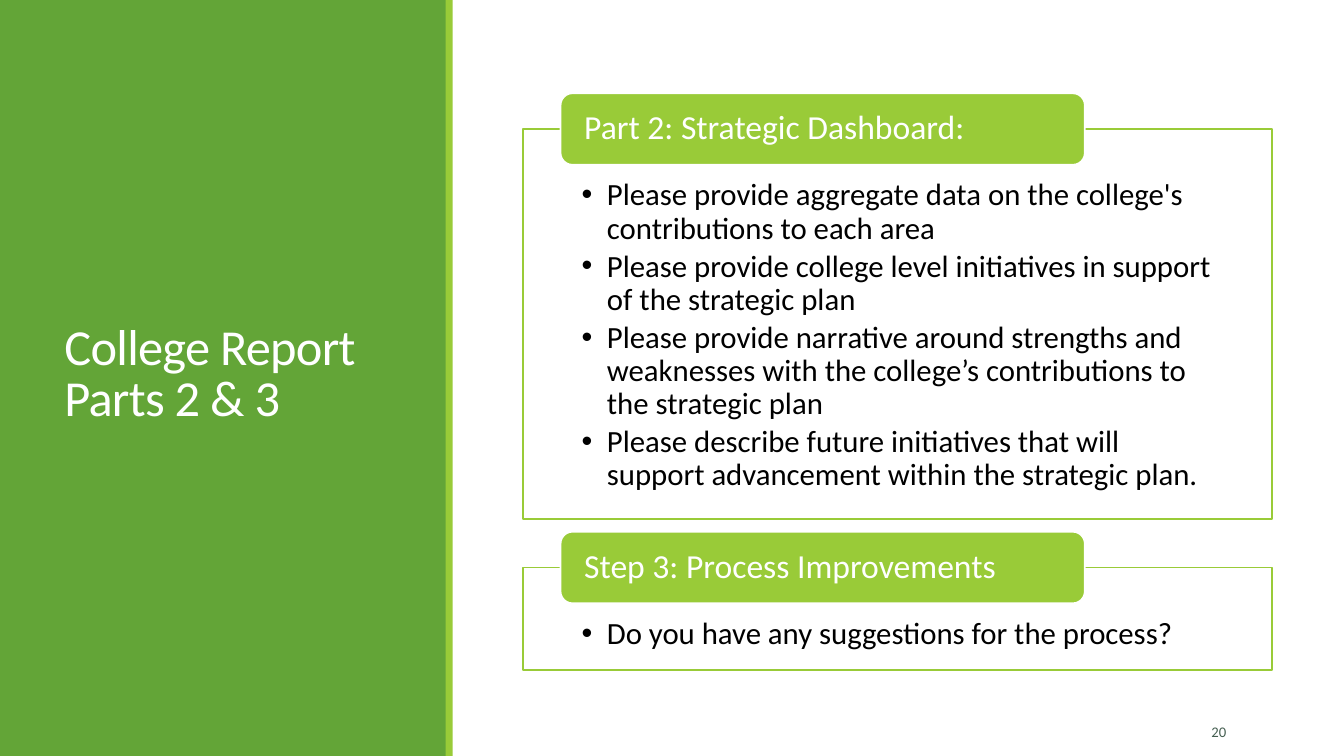
from dataclasses import dataclass

from lxml import etree
from pptx import Presentation
from pptx.dml.color import RGBColor
from pptx.enum.shapes import MSO_SHAPE
from pptx.enum.text import MSO_ANCHOR, PP_ALIGN
from pptx.oxml.ns import qn
from pptx.shapes.autoshape import Shape
from pptx.slide import Slide
from pptx.text.text import TextFrame, _Paragraph
from pptx.util import Inches, Pt

RECTANGLE = MSO_SHAPE.RECTANGLE
ROUNDED = MSO_SHAPE.ROUNDED_RECTANGLE
TOP, MIDDLE = MSO_ANCHOR.TOP, MSO_ANCHOR.MIDDLE
LEFT, RIGHT = PP_ALIGN.LEFT, PP_ALIGN.RIGHT


@dataclass(frozen=True)
class Theme:
    font: str = "Calibri"
    green: RGBColor = RGBColor(0x63, 0xA5, 0x37)
    lime: RGBColor = RGBColor(0x99, 0xCB, 0x38)
    slate: RGBColor = RGBColor(0x45, 0x5F, 0x51)
    white: RGBColor = RGBColor(0xFF, 0xFF, 0xFF)
    black: RGBColor = RGBColor(0, 0, 0)
    title_size: float = 36
    heading_size: float = 24
    body_size: float = 22
    number_size: float = 10.5
    outline: float = 1.25


@dataclass(frozen=True)
class Box:
    left: float
    top: float
    width: float
    height: float


@dataclass(frozen=True)
class Section:
    heading: str
    bullets: tuple[str, ...]
    top: float
    height: float


THEME = Theme()
SECTIONS = (
    Section(
        "Part 2: Strategic Dashboard:",
        (
            "Please provide aggregate data on the college's contributions to each area",
            "Please provide college level initiatives in support of the strategic plan",
            "Please provide narrative around strengths and weaknesses with the "
            "college’s contributions to the strategic plan",
            "Please describe future initiatives that will support advancement "
            "within the strategic plan.",
        ),
        top=1.28,
        height=3.87,
    ),
    Section(
        "Step 3: Process Improvements",
        ("Do you have any suggestions for the process?",),
        top=5.63,
        height=1.02,
    ),
)


def add_box(slide: Slide, kind: MSO_SHAPE, box: Box, fill: RGBColor,
            line: RGBColor | None = None) -> Shape:
    shape = slide.shapes.add_shape(kind, Inches(box.left), Inches(box.top),
                                   Inches(box.width), Inches(box.height))
    shape.shadow.inherit = False
    shape.fill.solid()
    shape.fill.fore_color.rgb = fill
    if line is None:
        shape.line.fill.background()
    else:
        shape.line.color.rgb = line
        shape.line.width = Pt(THEME.outline)
    return shape


def add_text_box(slide: Slide, box: Box) -> TextFrame:
    return slide.shapes.add_textbox(Inches(box.left), Inches(box.top),
                                    Inches(box.width), Inches(box.height)).text_frame


def write(frame: TextFrame, lines: tuple[str, ...], size: float, color: RGBColor,
          anchor: MSO_ANCHOR = MIDDLE, align: PP_ALIGN = LEFT,
          spacing: float = 1.0, after: float = 0) -> None:
    frame.word_wrap = True
    frame.vertical_anchor = anchor
    frame.text = "\n".join(lines)
    for paragraph in frame.paragraphs:
        paragraph.alignment = align
        paragraph.line_spacing = spacing
        paragraph.space_after = Pt(after)
        for run in paragraph.runs:
            run.font.name = THEME.font
            run.font.size = Pt(size)
            run.font.color.rgb = color


def set_insets(frame: TextFrame, side: float, top: float, bottom: float) -> None:
    frame.margin_left = frame.margin_right = Inches(side)
    frame.margin_top, frame.margin_bottom = Inches(top), Inches(bottom)


def add_bullet(paragraph: _Paragraph) -> None:
    properties = paragraph._p.get_or_add_pPr()
    properties.set("marL", str(Inches(0.25)))
    properties.set("indent", str(Inches(-0.25)))
    etree.SubElement(properties, qn("a:buFont")).set("typeface", "Arial")
    etree.SubElement(properties, qn("a:buChar")).set("char", "•")


def add_section(slide: Slide, section: Section) -> None:
    # Outlined body with its bullets
    body = add_box(slide, RECTANGLE, Box(5.19, section.top, 7.43, section.height),
                   THEME.white, THEME.lime).text_frame
    set_insets(body, 0.58, 0.5, 0.17)
    write(body, section.bullets, THEME.body_size, THEME.black,
          anchor=TOP, spacing=0.9, after=THEME.body_size * 0.15)
    for paragraph in body.paragraphs:
        add_bullet(paragraph)

    # Heading tab centred on the top edge of the body
    tab_height = 0.71
    tab = add_box(slide, ROUNDED,
                  Box(5.56, section.top - tab_height / 2, 5.2, tab_height),
                  THEME.lime, THEME.white).text_frame
    set_insets(tab, 0.2, 0, 0)
    write(tab, (section.heading,), THEME.heading_size, THEME.white, spacing=0.9)


def main() -> None:
    presentation = Presentation()
    presentation.slide_width = Inches(13.33)
    presentation.slide_height = Inches(7.5)
    slide = presentation.slides.add_slide(presentation.slide_layouts[6])

    # Side panel with its accent strip
    add_box(slide, RECTANGLE, Box(0, 0, 4.43, 7.5), THEME.green)
    add_box(slide, RECTANGLE, Box(4.42, 0, 0.07, 7.5), THEME.lime)

    # Title
    title = add_text_box(slide, Box(0.54, 0.57, 3.37, 6.31))
    write(title, ("College Report Parts 2 & 3",), THEME.title_size, THEME.white,
          spacing=0.85)
    title.paragraphs[0].runs[0].font._element.set("spc", "-50")

    # Sections
    for section in SECTIONS:
        add_section(slide, section)

    # Slide number
    number = add_text_box(slide, Box(11.07, 7.06, 1.19, 0.4))
    write(number, ("20",), THEME.number_size, THEME.slate, align=RIGHT, after=6)

    presentation.save("out.pptx")


if __name__ == "__main__":
    main()
